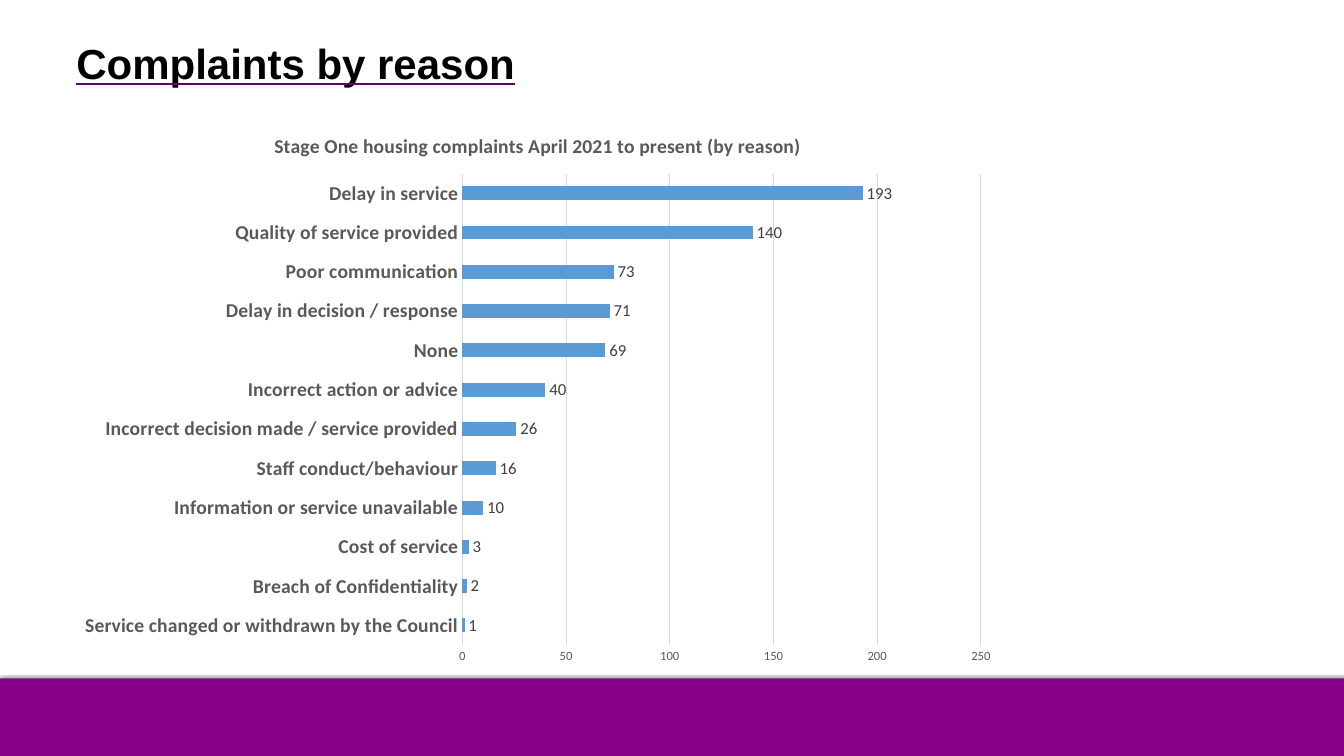
from lxml import etree
from pptx import Presentation
from pptx import util as u
from pptx.chart import data as cd
from pptx.dml import color
from pptx.enum import chart as ce, shapes, text
from pptx.oxml import parse_xml
from pptx.oxml.ns import nsdecls, qn

REASONS = [
    ("Service changed or withdrawn by the Council", 1),
    ("Breach of Confidentiality", 2),
    ("Cost of service", 3),
    ("Information or service unavailable", 10),
    ("Staff conduct/behaviour", 16),
    ("Incorrect decision made / service provided", 26),
    ("Incorrect action or advice", 40),
    ("None", 69),
    ("Delay in decision / response", 71),
    ("Poor communication", 73),
    ("Quality of service provided", 140),
    ("Delay in service", 193),
]


def rgb(value):
    return color.RGBColor.from_string(value)


def set_font(f, size, hex_color, bold=False, name="Calibri"):
    f.size, f.bold, f.name = u.Pt(size), bold, name
    f.color.rgb = rgb(hex_color)


def write(tf, content, size, hex_color, bold=False, name="Calibri", underline=None):
    p = tf.paragraphs[0]
    r = p.add_run()
    r.text = content
    set_font(r.font, size, hex_color, bold, name)
    if underline:
        r.font.underline = True
        fill = parse_xml(
            f'<a:uFill {nsdecls("a")}><a:solidFill><a:srgbClr val="{underline}"/>'
            "</a:solidFill></a:uFill>")
        r.font._element.find(qn("a:latin")).addprevious(fill)
    return p


def add_footer(s, x, y, w, h):
    sp = s.shapes.add_shape(shapes.MSO_SHAPE.RECTANGLE, *map(u.Inches, (x, y, w, h)))
    sp.fill.solid()
    sp.fill.fore_color.rgb = rgb("880088")
    sp.line.fill.background()
    sp.shadow.inherit = False
    effects = sp._element.spPr.find(qn("a:effectLst"))
    effects.append(parse_xml(
        f'<a:outerShdw {nsdecls("a")} blurRad="12700" dist="12700" dir="16200000">'
        '<a:srgbClr val="000000"><a:alpha val="50000"/></a:srgbClr></a:outerShdw>'))


def add_heading(s, x, y, w, h):
    tf = s.shapes.add_textbox(*map(u.Inches, (x, y, w, h))).text_frame
    tf.word_wrap = True
    tf.vertical_anchor = text.MSO_ANCHOR.MIDDLE
    p = write(tf, "Complaints by reason", 30, "000000", True, "Arial", "660066")
    p.line_spacing = 0.9


def place_plot(chart, x, y, w, h):
    area = chart._chartSpace.chart.plotArea
    for old in area.findall(qn("c:layout")):
        area.remove(old)
    layout = etree.Element(qn("c:layout"))
    manual = etree.SubElement(layout, qn("c:manualLayout"))
    settings = [("layoutTarget", "inner"), ("xMode", "edge"), ("yMode", "edge"),
                ("x", x), ("y", y), ("w", w), ("h", h)]
    for tag, value in settings:
        etree.SubElement(manual, qn(f"c:{tag}")).set("val", str(value))
    area.insert(0, layout)


def style_axis(axis, size, bold):
    axis.major_tick_mark = axis.minor_tick_mark = ce.XL_TICK_MARK.NONE
    set_font(axis.tick_labels.font, size, "595959", bold)


def style_line(line):
    line.color.rgb = rgb("D9D9D9")
    line.width = u.Pt(0.75)


def add_reasons_chart(s, x, y, w, h):
    data = cd.CategoryChartData()
    data.categories = [reason for reason, _ in REASONS]
    data.add_series("Series 1", [count for _, count in REASONS])
    chart = s.shapes.add_chart(
        ce.XL_CHART_TYPE.BAR_CLUSTERED, *map(u.Inches, (x, y, w, h)), data).chart
    set_font(chart.font, 10, "000000")
    chart.has_legend = False
    chart.has_title = True
    write(chart.chart_title.text_frame,
          "Stage One housing complaints April 2021 to present (by reason)",
          14, "595959", True)
    chart.chart_title.include_in_layout = False
    place_plot(chart, 0.42, 0.11, 0.55, 0.84)

    style_axis(chart.category_axis, 14, True)
    style_line(chart.category_axis.format.line)
    value_axis = chart.value_axis
    style_axis(value_axis, 9, False)
    value_axis.format.line.fill.background()
    value_axis.minimum_scale, value_axis.maximum_scale = 0, 250
    value_axis.major_unit = 50
    style_line(value_axis.major_gridlines.format.line)

    plot = chart.plots[0]
    plot.gap_width = 182
    plot.vary_by_categories = False
    bars = plot.series[0]
    bars.format.fill.solid()
    bars.format.fill.fore_color.rgb = rgb("5B9BD5")
    labels = bars.data_labels
    labels.show_value = True
    labels.position = ce.XL_LABEL_POSITION.OUTSIDE_END
    set_font(labels.font, 12, "404040")


def main():
    prs = Presentation()
    prs.slide_width, prs.slide_height = u.Inches(13.33), u.Inches(7.5)
    s = prs.slides.add_slide(prs.slide_layouts[6])
    add_footer(s, 0, 6.73, 13.33, 0.79)
    add_heading(s, 0.66, 0.19, 11.5, 0.92)
    add_reasons_chart(s, 0.66, 1.11, 9.35, 5.57)
    prs.save("out.pptx")


if __name__ == "__main__":
    main()
